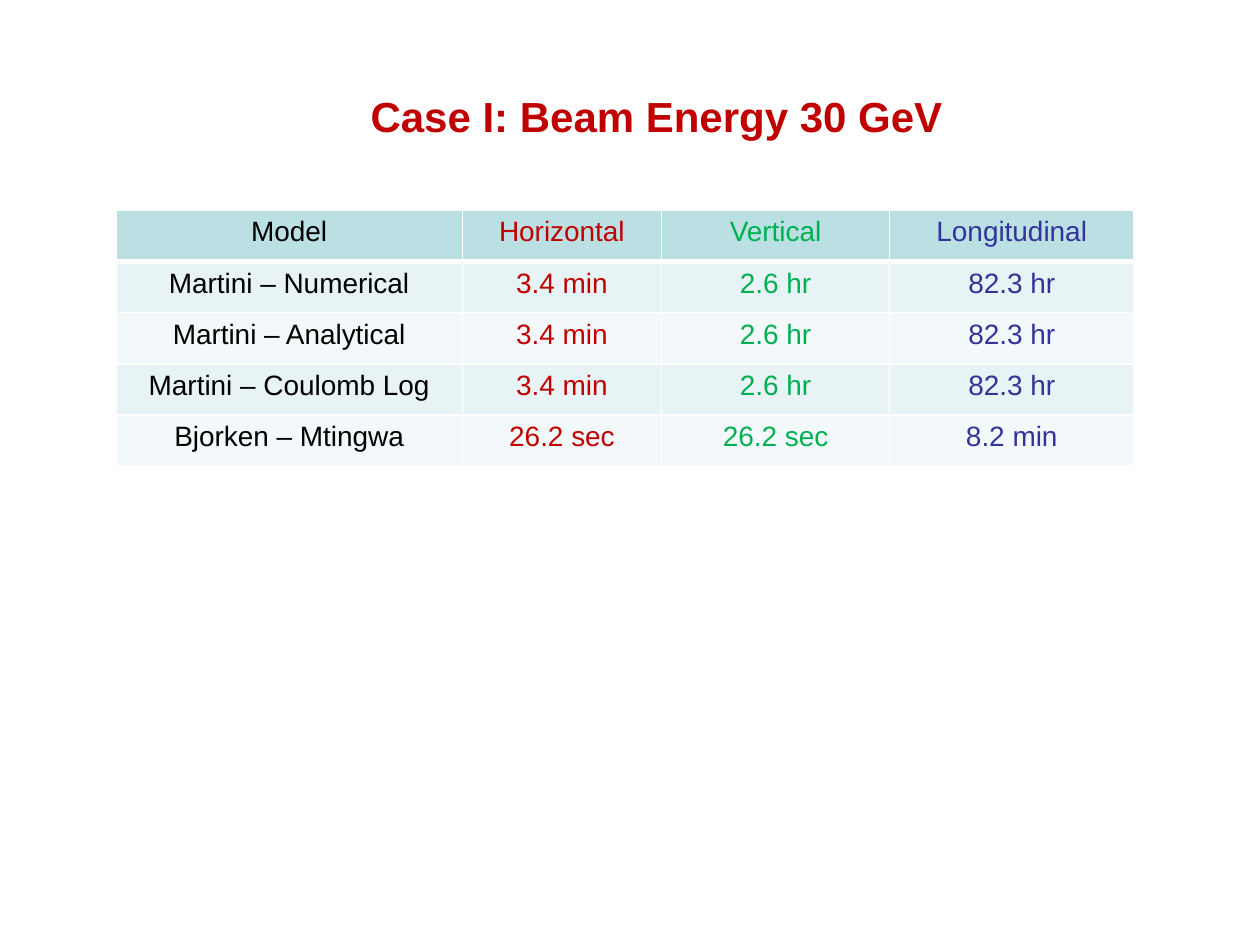
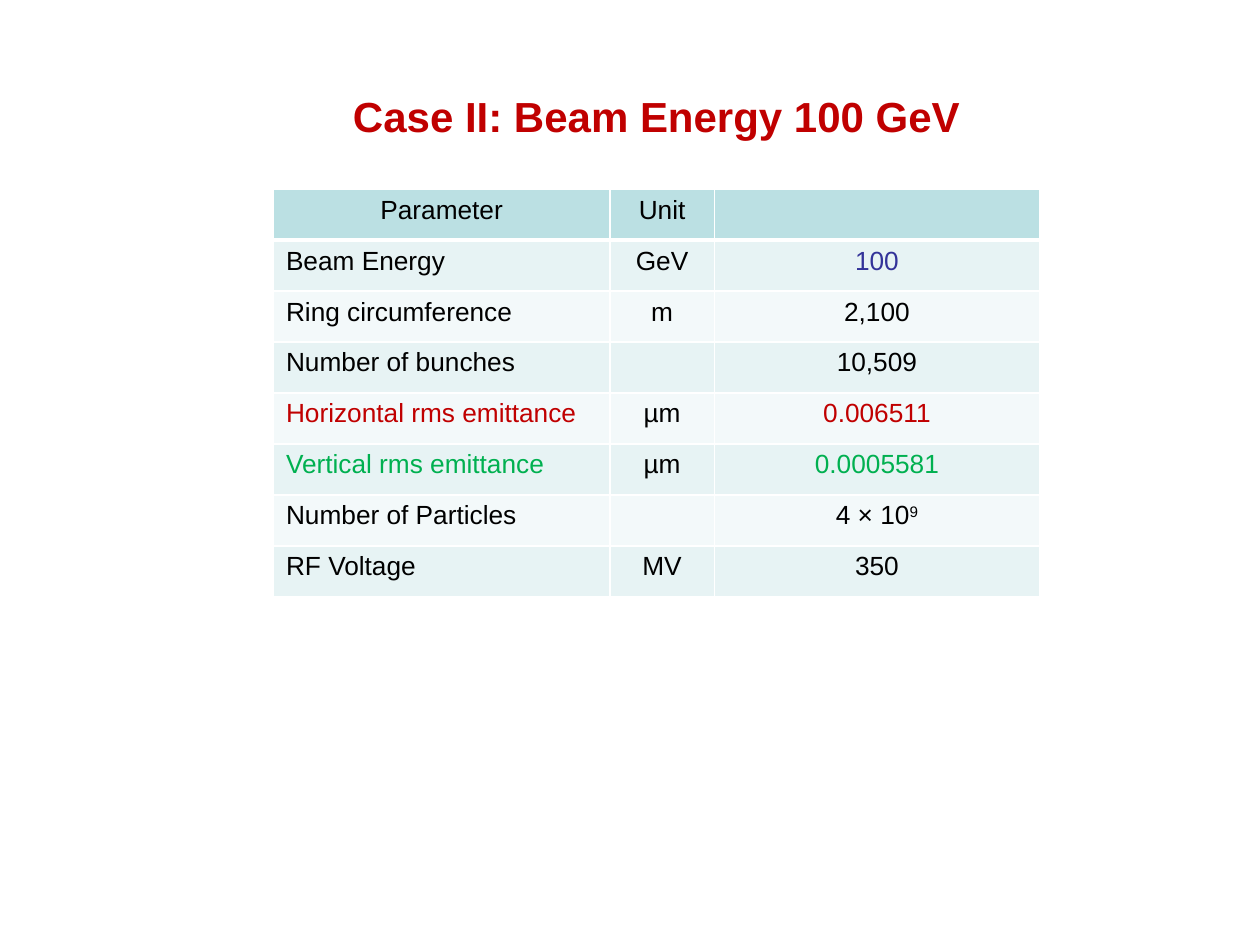
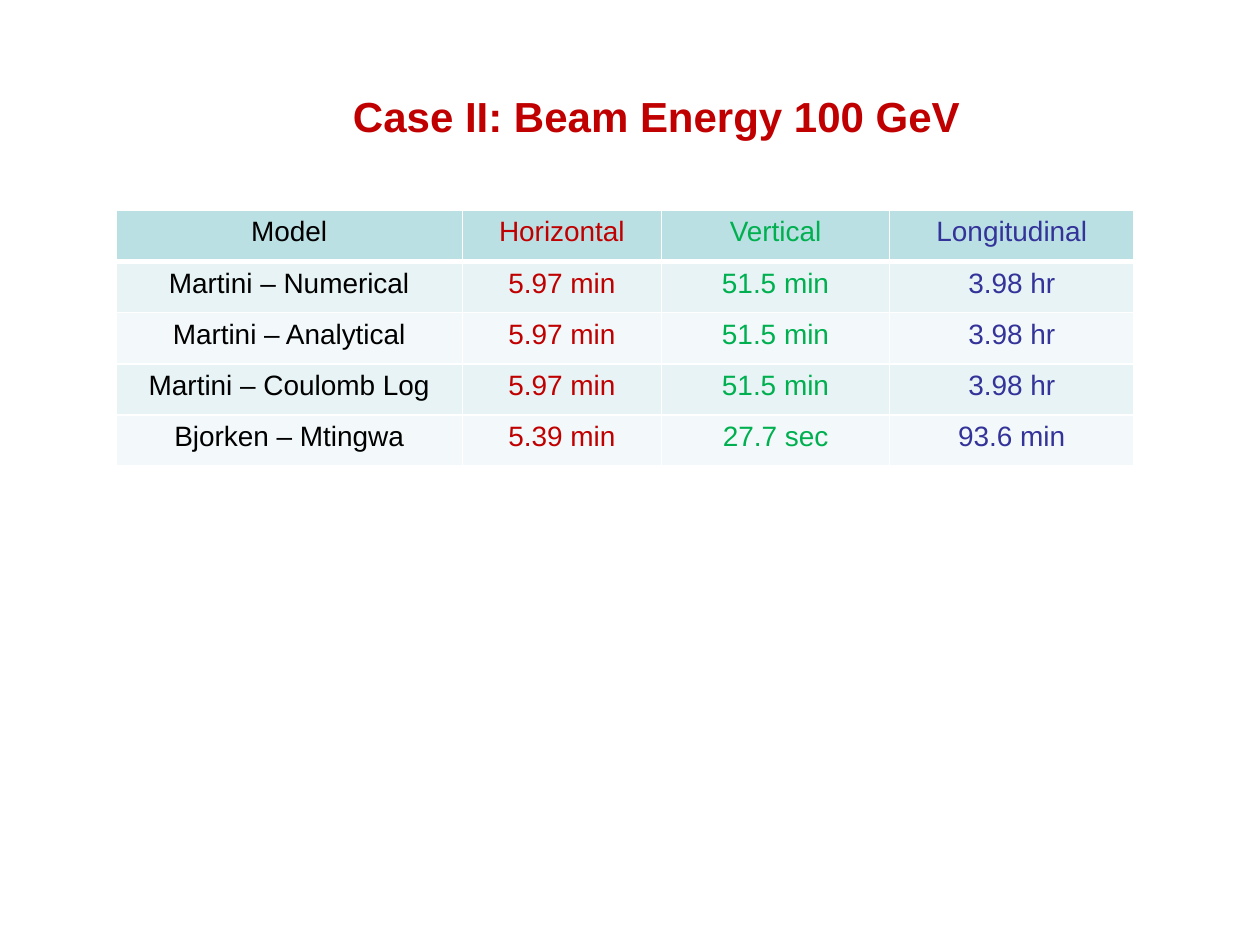
from lxml import etree
from pptx import Presentation
from pptx import util as u
from pptx.dml.color import RGBColor
from pptx.enum import text
from pptx.oxml.ns import qn

# Shared look
BLACK, RED, GREEN, BLUE, WHITE = "000000", "C00000", "00B050", "333399", "FFFFFF"
HEADER_FILL, BAND_FILLS = "BBE0E3", ("E7F3F4", "F3F9FA")
TITLE_FORMAT = {"name": "Arial", "size": u.Pt(24), "bold": True}
CENTER, LEFT = text.PP_ALIGN.CENTER, text.PP_ALIGN.LEFT


def write(paragraph, words, format_values, color, raised=False):
    span = paragraph.add_run()
    span.text = words
    for name, value in format_values.items():
        setattr(span.font, name, value)
    span.font.color.rgb = RGBColor.from_string(color)
    if raised:
        span.font._element.set("baseline", "30000")


def add_border(cell, side, points):
    line = etree.SubElement(cell._tc.get_or_add_tcPr(), qn(f"a:ln{side}"), w=str(u.Pt(points)))
    fill = etree.SubElement(line, qn("a:solidFill"))
    etree.SubElement(fill, qn("a:srgbClr"), val=WHITE)


# Growth time tables: one colour per column
time_columns = [2.75, 1.58, 1.81, 1.94]
time_header = ["Model", "Horizontal", "Vertical", "Longitudinal"]
models = ["Martini – Numerical", "Martini – Analytical", "Martini – Coulomb Log", "Bjorken – Mtingwa"]
times_30 = [["3.4 min", "2.6 hr", "82.3 hr"]] * 3 + [["26.2 sec", "26.2 sec", "8.2 min"]]
times_100 = [["5.97 min", "51.5 min", "3.98 hr"]] * 3 + [["5.39 min", "27.7 sec", "93.6 min"]]
time_colors = [[BLACK, RED, GREEN, BLUE]] * 5

# Parameter table: colours follow the quantity; ^ starts a superscript
parameter_rows = [
    ["Parameter", "Unit", ""],
    ["Beam Energy", "GeV", "100"],
    ["Ring circumference", "m", "2,100"],
    ["Number of bunches", "", "10,509"],
    ["Horizontal rms emittance", "µm", "0.006511"],
    ["Vertical rms emittance", "µm", "0.0005581"],
    ["Number of Particles", "", "4 × 10^9"],
    ["RF Voltage", "MV", "350"],
]
parameter_colors = [[BLACK] * 3 for row in parameter_rows]
parameter_colors[1] = [BLACK, BLACK, BLUE]
parameter_colors[4] = [RED, BLACK, RED]
parameter_colors[5] = [GREEN, BLACK, GREEN]

pages = [
    {"title": "Case I: Beam Energy 30 GeV", "at": (0.92, 1.67, 8.08, 2.03), "columns": time_columns,
     "rows": [time_header] + [[model] + times for model, times in zip(models, times_30)],
     "colors": time_colors, "size": 16, "first_align": CENTER},
    {"title": "Case II: Beam Energy 100 GeV", "at": (2.17, 1.5, 6.08, 3.24), "columns": [2.67, 0.83, 2.58],
     "rows": parameter_rows, "colors": parameter_colors, "size": 15, "first_align": LEFT},
    {"title": "Case II: Beam Energy 100 GeV", "at": (0.92, 1.67, 8.08, 2.03), "columns": time_columns,
     "rows": [time_header] + [[model] + times for model, times in zip(models, times_100)],
     "colors": time_colors, "size": 16, "first_align": CENTER},
]

deck = Presentation()
deck.slide_width, deck.slide_height = u.Inches(10), u.Inches(7.5)

for content in pages:
    page = deck.slides.add_slide(deck.slide_layouts[6])

    # Table
    rows, widths = content["rows"], content["columns"]
    table = page.shapes.add_table(len(rows), len(widths), *map(u.Inches, content["at"])).table
    table.first_row = table.horz_banding = False
    for column, width in zip(table.columns, widths):
        column.width = u.Inches(width)
    cell_format = {"name": "Arial", "size": u.Pt(content["size"])}
    for r, row in enumerate(rows):
        for c, words in enumerate(row):
            cell = table.cell(r, c)
            # The rule below the header is heavier than the others
            for side, heavy_row in (("L", None), ("R", None), ("T", 1), ("B", 0)):
                add_border(cell, side, 3 if r == heavy_row else 1)
            cell.fill.solid()
            cell.fill.fore_color.rgb = RGBColor.from_string(BAND_FILLS[(r - 1) % 2] if r else HEADER_FILL)
            para = cell.text_frame.paragraphs[0]
            para.alignment = content["first_align"] if r and c == 0 else CENTER
            if words:
                base, _, power = words.partition("^")
                write(para, base, cell_format, content["colors"][r][c])
                if power:
                    write(para, power, cell_format, content["colors"][r][c], raised=True)

    # Title
    box = page.shapes.add_textbox(*map(u.Inches, (2.42, 0.67, 5.58, 0.5)))
    frame = box.text_frame
    frame.word_wrap = True
    frame.auto_size = text.MSO_AUTO_SIZE.SHAPE_TO_FIT_TEXT
    frame.paragraphs[0].alignment = CENTER
    write(frame.paragraphs[0], content["title"], TITLE_FORMAT, RED)

deck.save("out.pptx")
